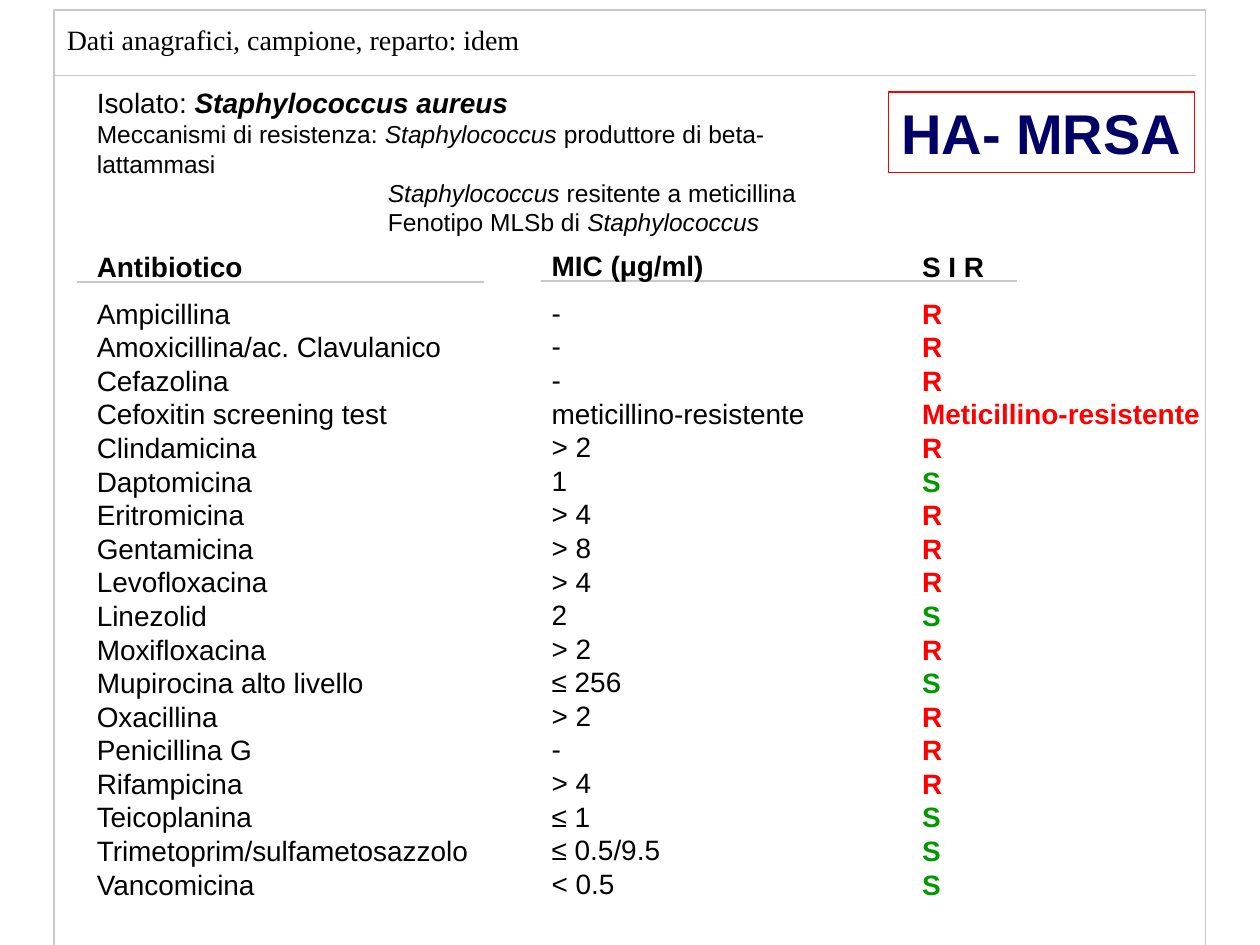
from dataclasses import dataclass

from lxml import etree
from pptx import Presentation
from pptx.dml.color import RGBColor
from pptx.enum.shapes import MSO_CONNECTOR, MSO_SHAPE
from pptx.enum.text import MSO_ANCHOR, MSO_AUTO_SIZE, PP_ALIGN
from pptx.oxml.ns import qn
from pptx.util import Inches, Pt

RECTANGLE = MSO_SHAPE.RECTANGLE
STRAIGHT = MSO_CONNECTOR.STRAIGHT
TOP, MIDDLE = MSO_ANCHOR.TOP, MSO_ANCHOR.MIDDLE
LEFT, CENTER = PP_ALIGN.LEFT, PP_ALIGN.CENTER
FIXED_SIZE = MSO_AUTO_SIZE.NONE

COLORS = {"text": "000000", "rule": "C7C9C7", "R": "FF0000",
          "S": "009900", "badge": "000066"}
WIDTH, HEIGHT = Inches(10), Inches(7.5)
LEADING = 1.2  # line pitch as a multiple of the font size
BODY, DETAIL = 16, 14


@dataclass(frozen=True)
class Area:
    """Left, top, width and height in percent of the slide."""
    left: float
    top: float
    width: float
    height: float

    def emu(self) -> tuple[int, int, int, int]:
        return (across(self.left), down(self.top),
                across(self.width), down(self.height))


@dataclass(frozen=True)
class Rule:
    start: float
    end: float
    y: float


@dataclass(frozen=True)
class Span:
    text: str
    bold: bool = False
    italic: bool = False


@dataclass(frozen=True)
class Line:
    spans: tuple[Span, ...]
    size: int = DETAIL
    indent: float = 0


@dataclass(frozen=True)
class Result:
    antibiotic: str
    mic: str
    rating: str


def across(percent: float) -> int:
    return round(WIDTH * percent / 100)


def down(percent: float) -> int:
    return round(HEIGHT * percent / 100)


def rgb(name: str) -> RGBColor:
    return RGBColor.from_string(COLORS[name])


def style(font, size: int, color: str = "text", bold: bool = False,
          italic: bool = False, name: str = "Arial") -> None:
    font.name, font.size = name, Pt(size)
    font.bold, font.italic = bold, italic
    font.color.rgb = rgb(color)


def add_frame(slide, area: Area, color: str):
    frame = slide.shapes.add_shape(RECTANGLE, *area.emu())
    frame.shadow.inherit = False
    frame.fill.background()
    frame.line.color.rgb = rgb(color)
    frame.line.width = Pt(0.75)
    return frame


def add_rule(slide, rule: Rule) -> None:
    y = down(rule.y)
    line = slide.shapes.add_connector(
        STRAIGHT, across(rule.start), y, across(rule.end), y)
    line.line.color.rgb = rgb("rule")
    line.line.width = Pt(0.75)
    etree.SubElement(line._element.spPr, qn("a:effectLst"))


def add_isolate(slide, area: Area, lines: tuple[Line, ...]) -> None:
    frame = slide.shapes.add_textbox(*area.emu()).text_frame
    frame.word_wrap = True
    for index, line in enumerate(lines):
        paragraph = frame.add_paragraph() if index else frame.paragraphs[0]
        paragraph.line_spacing = Pt(line.size * LEADING)
        if line.indent:
            properties = paragraph._p.get_or_add_pPr()
            properties.set("marL", str(across(line.indent)))
            properties.set("indent", "0")
        for span in line.spans:
            run = paragraph.add_run()
            run.text = span.text
            style(run.font, line.size, bold=span.bold, italic=span.italic)


def add_column(slide, area: Area, heading: str, values: list[str],
               colors: list[str], bold: bool = False) -> None:
    frame = slide.shapes.add_textbox(*area.emu()).text_frame
    frame.word_wrap = False
    frame.text = "\n".join([heading, *values])
    for index, (paragraph, color) in enumerate(
            zip(frame.paragraphs, ["text", *colors])):
        paragraph.line_spacing = Pt(BODY * LEADING)
        style(paragraph.runs[0].font, BODY, color, bold or index == 0)
    # Gap between the heading and the first result
    frame.paragraphs[1].space_before = Pt(7.6)


ISOLATE = (
    Line((Span("Isolato: "), Span("Staphylococcus aureus", True, True)), BODY),
    Line((Span("Meccanismi di resistenza:"),
          Span(" Staphylococcus ", italic=True),
          Span("produttore di beta-lattammasi"))),
    Line((Span("Staphylococcus", italic=True),
          Span(" resitente a meticillina")), indent=23.1),
    Line((Span("Fenotipo MLSb di "),
          Span("Staphylococcus", italic=True)), indent=23.1),
)
RESULTS = (
    Result("Ampicillina", "-", "R"),
    Result("Amoxicillina/ac. Clavulanico", "-", "R"),
    Result("Cefazolina", "-", "R"),
    Result("Cefoxitin screening test", "meticillino-resistente",
           "Meticillino-resistente"),
    Result("Clindamicina", "> 2", "R"),
    Result("Daptomicina", "1", "S"),
    Result("Eritromicina", "> 4", "R"),
    Result("Gentamicina", "> 8", "R"),
    Result("Levofloxacina", "> 4", "R"),
    Result("Linezolid", "2", "S"),
    Result("Moxifloxacina", "> 2", "R"),
    Result("Mupirocina alto livello", "≤ 256", "S"),
    Result("Oxacillina", "> 2", "R"),
    Result("Penicillina G", "-", "R"),
    Result("Rifampicina", "> 4", "R"),
    Result("Teicoplanina", "≤ 1", "S"),
    Result("Trimetoprim/sulfametosazzolo", "≤ 0.5/9.5", "S"),
    Result("Vancomicina", "< 0.5", "S"),
)
RULES = (Rule(4.3, 94.9, 8), Rule(6.1, 38.4, 29.85), Rule(42.9, 80.7, 29.75))


def main() -> None:
    presentation = Presentation()
    presentation.slide_width, presentation.slide_height = WIDTH, HEIGHT
    slide = presentation.slides.add_slide(presentation.slide_layouts[5])

    # Report heading
    title = slide.shapes.title
    title.left, title.top, title.width, title.height = Area(
        4.3, 1.73, 90.8, 4.93).emu()
    heading = title.text_frame
    heading.text = "Dati anagrafici, campione, reparto: idem"
    heading.auto_size = FIXED_SIZE
    heading.vertical_anchor = TOP
    heading.paragraphs[0].alignment = LEFT
    style(heading.paragraphs[0].runs[0].font, BODY, name="Times New Roman")

    # Report border and rules
    add_frame(slide, Area(4.3, 1.07, 91.4, 99.33), "rule")
    for rule in RULES:
        add_rule(slide, rule)

    # Isolate and resistance mechanisms
    add_isolate(slide, Area(6.7, 8.4, 63.5, 14.27), ISOLATE)

    # Antibiogram
    plain = ["text"] * len(RESULTS)
    ratings = [result.rating for result in RESULTS]
    add_column(slide, Area(6.7, 25.73, 31.6, 70.53), "Antibiotico",
               [result.antibiotic for result in RESULTS], plain)
    add_column(slide, Area(42.8, 25.65, 22.1, 70.53), "MIC (μg/ml)",
               [result.mic for result in RESULTS], plain)
    add_column(slide, Area(72.2, 25.73, 24.2, 70.53), "S I R", ratings,
               ["S" if rating == "S" else "R" for rating in ratings], True)

    # Strain badge
    badge = add_frame(slide, Area(70.5, 9.73, 24.3, 8.53), "R").text_frame
    badge.text = "HA- MRSA"
    badge.word_wrap = False
    badge.vertical_anchor = MIDDLE
    badge.paragraphs[0].alignment = CENTER
    style(badge.paragraphs[0].runs[0].font, 32, "badge", True)

    presentation.save("out.pptx")


if __name__ == "__main__":
    main()
